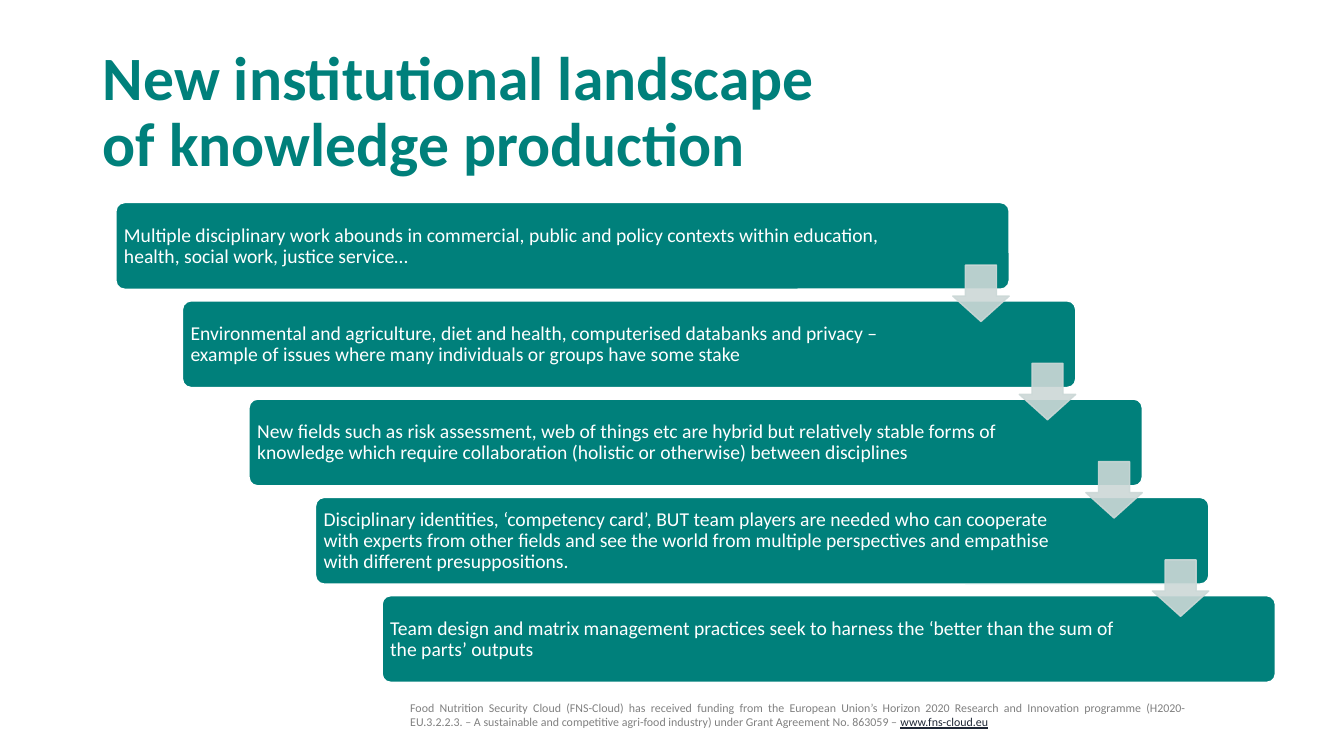
"""Build a slide with a staircase of statements joined by arrows."""
from lxml import etree
from pptx import Presentation
from pptx.dml.color import RGBColor
from pptx.enum.shapes import MSO_SHAPE
from pptx.enum.text import MSO_ANCHOR, MSO_AUTO_SIZE, PP_ALIGN
from pptx.oxml.ns import qn
from pptx.util import Inches, Pt

ROUNDED = MSO_SHAPE.ROUNDED_RECTANGLE
DOWN_ARROW = MSO_SHAPE.DOWN_ARROW
MIDDLE, TOP = MSO_ANCHOR.MIDDLE, MSO_ANCHOR.TOP
NO_FIT = MSO_AUTO_SIZE.NONE
LEFT, JUSTIFY = PP_ALIGN.LEFT, PP_ALIGN.JUSTIFY

COLOURS = {
    "teal": "00807B",
    "white": "FFFFFF",
    "arrow": "CCD8D7",
    "grey": "808080",
    "link": "1F2837",
}
FONT = "Calibri"
STEP_X, STEP_Y = 0.66, 0.975
STATEMENTS = [
    "Multiple disciplinary work abounds in commercial, public and policy contexts "
    "within education, health, social work, justice service…",
    "Environmental and agriculture, diet and health, computerised databanks and privacy – "
    "example of issues where many individuals or groups have some stake",
    "New fields such as risk assessment, web of things etc are hybrid but relatively stable "
    "forms of knowledge which require collaboration (holistic or otherwise) between disciplines",
    "Disciplinary identities, ‘competency card’, BUT team players are needed who can cooperate "
    "with experts from other fields and see the world from multiple perspectives and empathise "
    "with different presuppositions.",
    "Team design and matrix management practices seek to harness the ‘better than the sum of "
    "the parts’ outputs",
]
FUNDING = (
    "Food Nutrition Security Cloud (FNS-Cloud) has received funding from the European Union’s "
    "Horizon 2020 Research and Innovation programme (H2020-EU.3.2.2.3. – A sustainable and "
    "competitive agri-food industry) under Grant Agreement No. 863059 – "
)


def colour(name):
    return RGBColor.from_string(COLOURS[name])


def apply_format(target, **values):
    for name, value in values.items():
        setattr(target, name, value)


def format_font(font, size, shade, **values):
    apply_format(font, name=FONT, size=Pt(size), **values)
    font.color.rgb = colour(shade)


def format_frame(frame, anchor, **margins):
    apply_format(frame, word_wrap=True, auto_size=NO_FIT, vertical_anchor=anchor, **margins)


def add_title(page, text):
    title = page.shapes.title
    apply_format(title, left=Inches(0.92), top=Inches(0.4),
                 width=Inches(11.5), height=Inches(1.45))
    format_frame(title.text_frame, MIDDLE)
    title.text_frame.text = text
    para = title.text_frame.paragraphs[0]
    apply_format(para, alignment=LEFT, line_spacing=0.9)
    for span in para.runs:
        format_font(span.font, 44, "teal", bold=True)


def add_preset(page, preset, place, adjustments, fill, line, opacity=100):
    shape = page.shapes.add_shape(preset, *map(Inches, place))
    shape.shadow.inherit = False
    for index, value in enumerate(adjustments):
        shape.adjustments[index] = value
    shape.fill.solid()
    shape.fill.fore_color.rgb = colour(fill)
    shape.line.color.rgb = colour(line)
    shape.line.width = Pt(1)
    if opacity < 100:
        for tint in shape._element.spPr.iter(qn("a:srgbClr")):
            etree.SubElement(tint, qn("a:alpha")).set("val", str(opacity * 1000))


def add_statement(page, text, left, top, text_width):
    add_preset(page, ROUNDED, (left, top, 8.86, 0.86), [0.1], "teal", "white")
    place = (left + 0.02, top + 0.03, text_width, 0.81)
    box = page.shapes.add_textbox(*map(Inches, place))
    sides = ("left", "top", "right", "bottom")
    format_frame(box.text_frame, MIDDLE,
                 **{f"margin_{side}": Inches(0.06) for side in sides})
    para = box.text_frame.paragraphs[0]
    para.line_spacing = 0.9
    span = para.add_run()
    span.text = text
    format_font(span.font, 14, "white")


def add_arrow(page, left, top):
    add_preset(page, DOWN_ARROW, (left, top, 0.56, 0.56), [0.55, 0.45],
               "arrow", "arrow", opacity=90)


def add_funding_note(page):
    box = page.shapes.add_textbox(Inches(3.97), Inches(6.9), Inches(7.89), Inches(0.39))
    format_frame(box.text_frame, TOP)
    para = box.text_frame.paragraphs[0]
    para.alignment = JUSTIFY
    for text, shade, underline in ((FUNDING, "grey", False),
                                   ("www.fns-cloud.eu", "link", True)):
        span = para.add_run()
        span.text = text
        format_font(span.font, 8.5, shade, underline=underline)


def main():
    deck = Presentation()
    apply_format(deck, slide_width=Inches(13.33), slide_height=Inches(7.5))
    page = deck.slides.add_slide(deck.slide_layouts[5])
    add_funding_note(page)
    add_title(page, "New institutional landscape\vof knowledge production")
    for step, text in enumerate(STATEMENTS):
        text_width = 7.59 if step else 7.83
        add_statement(page, text, 1.15 + step * STEP_X, 2.01 + step * STEP_Y, text_width)
    for step in range(len(STATEMENTS) - 1):
        add_arrow(page, 9.45 + step * STEP_X, 2.63 + step * STEP_Y)
    deck.save("out.pptx")


if __name__ == "__main__":
    main()
